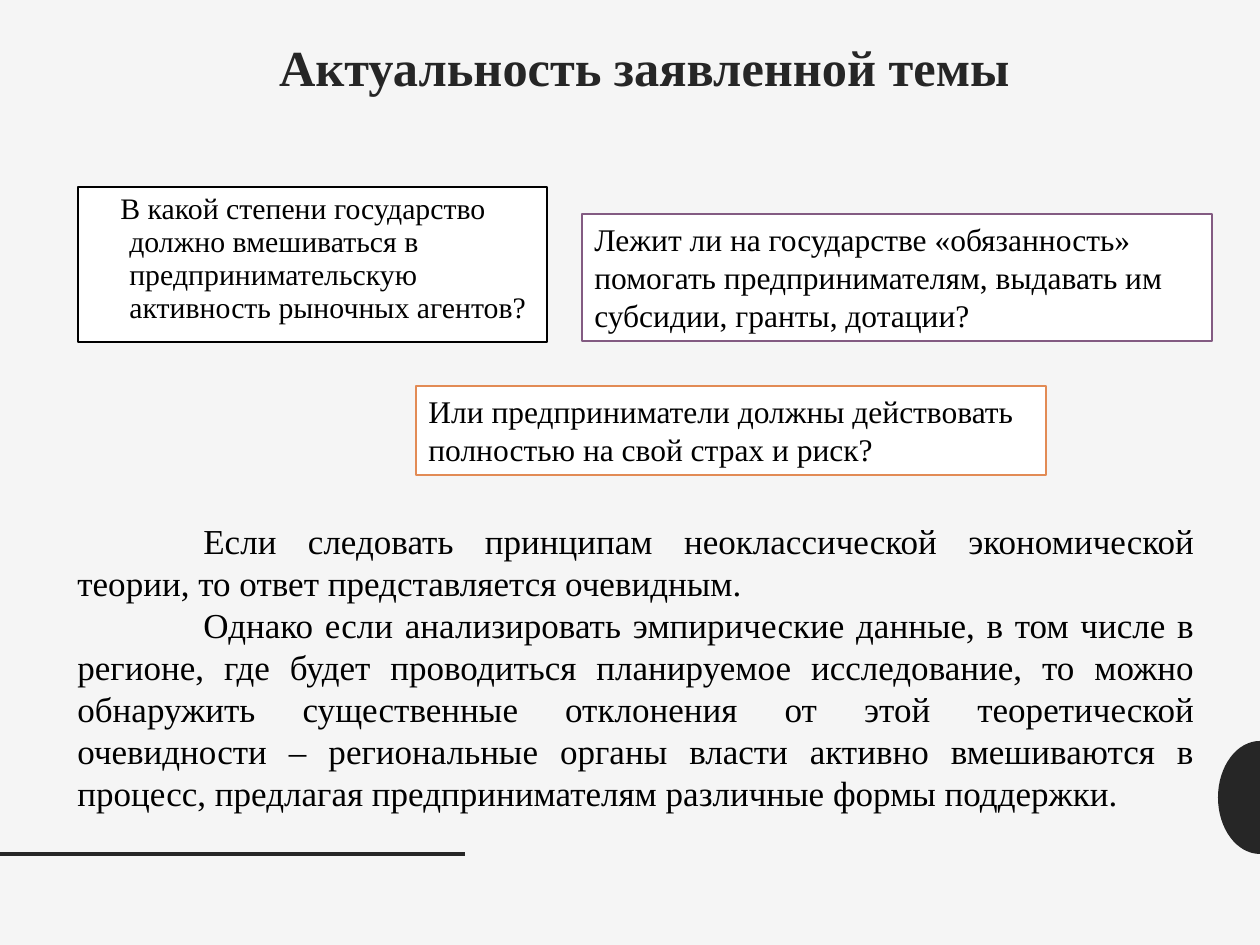
from math import cos, pi, sin

from lxml.etree import SubElement
from pptx import Presentation
from pptx.dml.color import RGBColor
from pptx.enum.shapes import MSO_CONNECTOR, MSO_SHAPE
from pptx.enum.text import MSO_ANCHOR, MSO_AUTO_SIZE, PP_ALIGN
from pptx.oxml.ns import qn
from pptx.util import Emu, Pt

FONT = "Times New Roman"
DARK, BLACK, WHITE, PAPER = "262626", "000000", "FFFFFF", "F5F5F5"
TITLE = "Актуальность заявленной темы"
QUESTIONS = [
    ((78, 187, 469, 155), BLACK,
     "В какой степени государство должно вмешиваться в предпринимательскую активность рыночных агентов?",
     {"size": Pt(17)}, {"line_spacing": 0.92}, (39, -9), MSO_AUTO_SIZE.NONE),
    ((582, 214, 630, 127), "835B82",
     "Лежит ли на государстве «обязанность» помогать предпринимателям, выдавать им субсидии, гранты, дотации?",
     {"size": Pt(18)}, {}, (0, 0), MSO_AUTO_SIZE.SHAPE_TO_FIT_TEXT),
    ((416, 386, 630, 89), "E28B55",
     "Или предприниматели должны действовать полностью на свой страх и риск?",
     {"size": Pt(18)}, {}, (0, 0), MSO_AUTO_SIZE.SHAPE_TO_FIT_TEXT),
]
ANSWER = [
    "Если следовать принципам неоклассической экономической теории, то ответ представляется очевидным.",
    "Однако если анализировать эмпирические данные, в том числе в регионе, где будет проводиться "
    "планируемое исследование, то можно обнаружить существенные отклонения от этой теоретической "
    "очевидности – региональные органы власти активно вмешиваются в процесс, предлагая "
    "предпринимателям различные формы поддержки.",
]


def px(n):
    """Turn px into EMU at 126 px to the inch."""
    return Emu(round(n * 914400 / 126))


def rgb(value):
    """Turn a hex string into a colour."""
    return RGBColor.from_string(value)


def assign(obj, values):
    """Set attributes from a dict of format values."""
    for name, value in values.items():
        setattr(obj, name, value)


def paint(sp, fill, line=None):
    """Give a shape a flat fill and an optional one-point outline."""
    sp.shadow.inherit = False
    sp.fill.solid()
    sp.fill.fore_color.rgb = rgb(fill)
    if line:
        sp.line.color.rgb = rgb(line)
        sp.line.width = Pt(1)
    else:
        sp.line.fill.background()


def write(tf, texts, font, para, indent=(0, 0), color=BLACK, **frame):
    """Fill a text frame with one paragraph for each text."""
    assign(tf, {"word_wrap": True, "vertical_anchor": MSO_ANCHOR.TOP, **frame})
    for i, text in enumerate(texts):
        p = tf.paragraphs[0] if i == 0 else tf.add_paragraph()
        assign(p, {"alignment": PP_ALIGN.LEFT, **para})
        pPr = p._p.get_or_add_pPr()
        for name, n in zip(("marL", "indent"), indent):
            pPr.set(name, str(int(px(n))))
        r = p.add_run()
        r.text = text
        assign(r.font, {"name": FONT, **font})
        r.font.color.rgb = rgb(color)


def add_decor(s, box, rule_width):
    """Draw the half ellipse at the right edge and the rule level with its foot."""
    x, y, w, h = box
    steps = 32
    points = [(px(x + w - w * sin(pi * i / steps)), px(y + h / 2 - h / 2 * cos(pi * i / steps)))
              for i in range(steps + 1)]
    builder = s.shapes.build_freeform(*points[0])
    builder.add_line_segments(points[1:], close=True)
    paint(builder.convert_to_shape(), DARK)
    rule = s.shapes.add_connector(MSO_CONNECTOR.STRAIGHT, 0, px(y + h), px(rule_width), px(y + h))
    rule.line.color.rgb = rgb(DARK)
    rule.line.width = Pt(2)
    SubElement(rule._element.spPr, qn("a:effectLst"))


def add_title(s, box):
    """Place and format the title placeholder."""
    title = s.shapes.title
    assign(title, dict(zip(("left", "top", "width", "height"), map(px, box))))
    write(title.text_frame, [TITLE], {"size": Pt(28.8), "bold": True},
          {"alignment": PP_ALIGN.CENTER, "line_spacing": 0.9}, color=DARK,
          auto_size=MSO_AUTO_SIZE.NONE)


def add_question(s, box, line, text, font, para, indent, auto_size):
    """Draw one outlined question box."""
    sp = s.shapes.add_shape(MSO_SHAPE.RECTANGLE, *map(px, box))
    paint(sp, WHITE, line)
    write(sp.text_frame, [text], font, para, indent, auto_size=auto_size)


def add_answer(s, box):
    """Write the justified text below the questions."""
    sp = s.shapes.add_textbox(*map(px, box))
    write(sp.text_frame, ANSWER, {"size": Pt(20)}, {"alignment": PP_ALIGN.JUSTIFY},
          (0, 126), vertical_anchor=MSO_ANCHOR.BOTTOM)


def main():
    """Build the slide and save it."""
    prs = Presentation()
    prs.slide_width, prs.slide_height = px(1260), px(945)
    s = prs.slides.add_slide(prs.slide_layouts[5])
    s.background.fill.solid()
    s.background.fill.fore_color.rgb = rgb(PAPER)
    add_decor(s, (1218, 741, 42, 113), 465)
    add_title(s, (78, 37, 1133, 150))
    for question in QUESTIONS:
        add_question(s, *question)
    add_answer(s, (65, 503, 1142, 317))
    prs.save("out.pptx")


if __name__ == "__main__":
    main()
